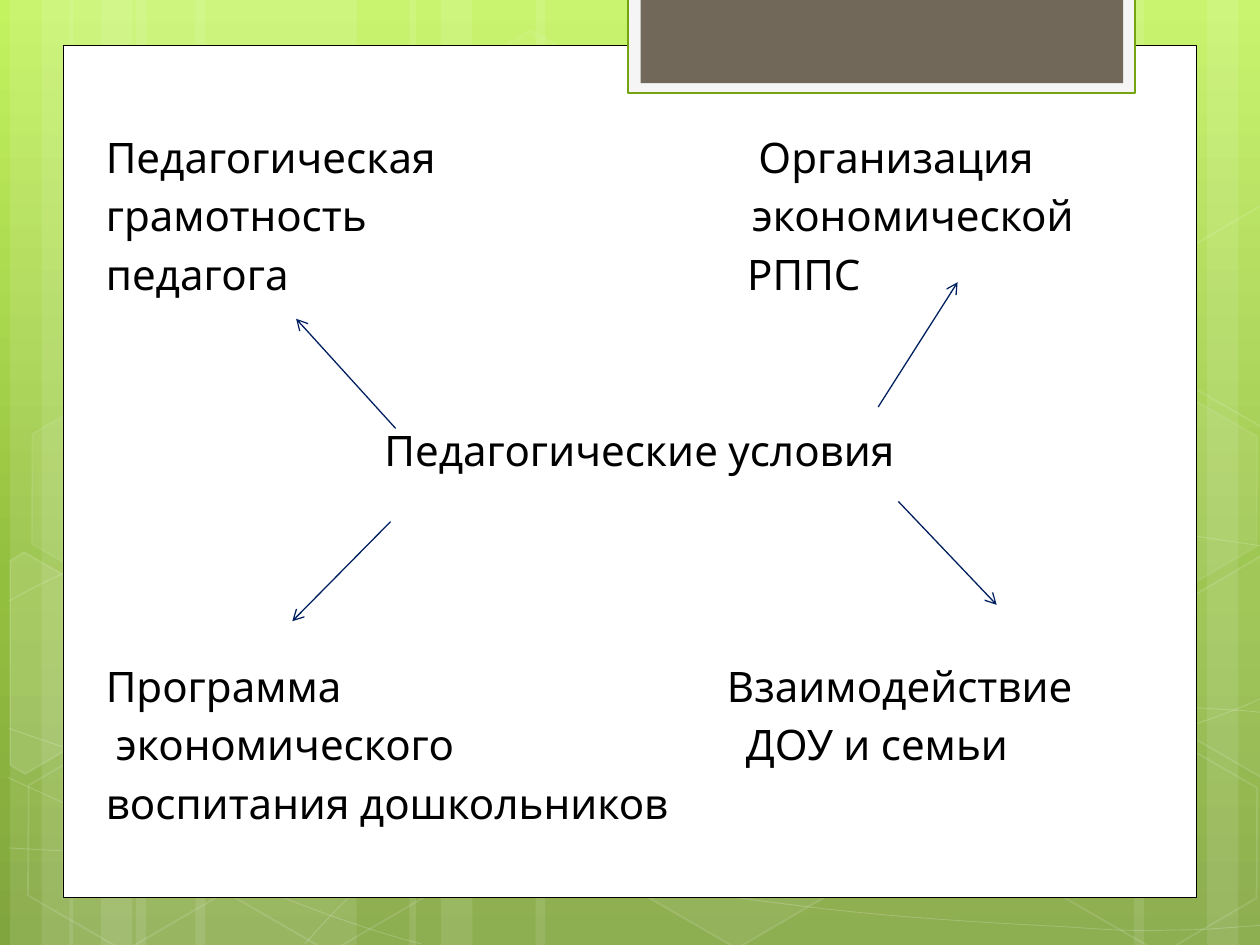
from copy import deepcopy
from math import cos, radians, sin
from typing import NamedTuple

from lxml import etree
from pptx import Presentation
from pptx.dml.color import RGBColor
from pptx.enum.shapes import MSO_CONNECTOR, MSO_SHAPE
from pptx.enum.text import MSO_ANCHOR, PP_ALIGN
from pptx.oxml.ns import qn
from pptx.util import Inches, Pt

RECTANGLE, HEXAGON = MSO_SHAPE.RECTANGLE, MSO_SHAPE.HEXAGON
STRAIGHT = MSO_CONNECTOR.STRAIGHT
LEFT, CENTER, TOP = PP_ALIGN.LEFT, PP_ALIGN.CENTER, MSO_ANCHOR.TOP
UNIT = Inches(0.1)
COLUMNS, ROWS, TILT = 100, 75, 30
FONT, FONT_SIZE, LINE_PITCH, LINE_GAP = "League Spartan", 24, 33.6, 4.8
WHITE, BLACK, NAVY = "FFFFFF", "000000", "002060"

SKY = [(0, "C3F35F"), (0.62, "93BF3F"), (1, "81A53E")]
STRIPES = [(10.8, 17.5), (0.8, 5), (3.3, 8.3), (15.5, 17.5), (5.5, 5), (8, 8.3),
           (73.3, 17.5), (95.8, 5), (90, 8.3), (42.5, 30.8), (32.5, 5), (35, 8.3)]
CURVES = [
    [(0.7, 67.3), (6.1, 67.6), (11.5, 67.9), (19, 67.8), (26.5, 67.7), (35.8, 67.5), (45.8, 66.5),
     (55.8, 65.5), (70, 63.6), (79.2, 61.7), (88.3, 59.8), (97.7, 56.8), (100.7, 55.1)],
    [(0.7, 47.7), (3.6, 46.1), (6.5, 44.6), (12.1, 43.1), (17.8, 41.6), (25.9, 39.4), (34.7, 38.7),
     (43.6, 38), (54.4, 37.9), (65.4, 38.7), (76.4, 39.5), (94.7, 42.6), (100.7, 43.4)],
    [(0.6, 61.7), (12.7, 67.2), (24.7, 72.7), (33.4, 74.9)],
    [(0.7, 57.8), (3.8, 58.9), (7, 60), (12.8, 61.6), (18.6, 63.1), (27.3, 65.6), (35.7, 67.3),
     (44, 69), (54.5, 70.8), (62.8, 71.8), (71.1, 72.9), (80, 73.3), (85.3, 73.6),
     (90.5, 74), (91.9, 73.8), (94.5, 73.8), (97.1, 73.7), (98.9, 73.5), (100.7, 73.4)],
    [(24.2, 74.9), (26, 72.9), (27.8, 70.9), (30.2, 69.1), (32.6, 67.3), (36, 65.3), (38.8, 63.9),
     (41.6, 62.5), (43.3, 61.9), (47, 60.9), (50.6, 59.9), (57.3, 58.5), (60.8, 57.8),
     (64.4, 57.1), (64.9, 57.1), (68, 56.9), (71.1, 56.6), (76, 56.3), (79.4, 56.2),
     (82.9, 56.1), (88.6, 56.2), (88.6, 56.2), (90.8, 56.2), (93.1, 56.2), (95.3, 56.2),
     (97.1, 56.3), (98.8, 56.4), (99.7, 56.5), (100.6, 56.6), (100.3, 56.5), (100.6, 56.6)],
]
HEXAGONS = [(33.4, 3.6, 4, 8), (49.7, 58.9, 6, 12), (1.1, 59.1, None, 12), (1.4, 31.2, 7, 8),
            (17.4, 59.2, None, 12), (75.3, 45.3, 10, 12), (83.4, 59.3, None, 12),
            (83.4, 31.4, 7, 8)]
LEFT_EDGE = [(-2.8, -9), (-1.7, -9.7), (6, -5.3), (5.9, 3.5), (-1.6, 7.9), (-2.8, 7.2)]
RIGHT_EDGE = [(-5.9, -3.5), (1.6, -7.9), (2.4, -7.4), (2.4, 9.3), (1.7, 9.7), (-5.9, 5.3)]
CUT_HEXAGONS = [(3.6, 53.5, LEFT_EDGE, 10), (98.5, 52, RIGHT_EDGE, 4),
                (98.5, 24.2, RIGHT_EDGE, None)]

CONDITIONS = [
    (0, "Педагогическая", 5.18, "Организация"),
    (0, "грамотность", 5.13, "экономической"),
    (0, "педагога", 5.09, "РППС"),
    (2, "Педагогические условия", None, None),
    (3, "Программа", 4.93, "Взаимодействие"),
    (0, " экономического", 5.08, "ДОУ и семьи"),
    (0, "воспитания дошкольников", None, None),
]
ARROWS = [((26.4, 30.4), (18.5, 21.7)), ((26, 37.8), (18.2, 45.7)),
          ((64.7, 28.7), (71, 18.8)), ((66.3, 36.2), (74.1, 44.4))]


class Box(NamedTuple):
    """Area measured in columns and rows of the page grid."""
    left: float
    top: float
    width: float
    height: float

    def inside(self, left, top, width, height):
        """Return an area offset from this one."""
        return Box(self.left + left, self.top + top, width, height)

    def lengths(self):
        """Return the four lengths for a shape."""
        return [int(value * UNIT) for value in self]

    def point(self, spot):
        """Return a spot of this area as slide lengths."""
        return int((self.left + spot[0]) * UNIT), int((self.top + spot[1]) * UNIT)


def color(hex_code):
    """Turn a hex string into a colour."""
    return RGBColor.from_string(hex_code)


def fade(fill, percent):
    """Give a solid fill an opacity in percent."""
    if percent < 100:
        value = fill._xPr.find(qn("a:solidFill"))[0]
        etree.SubElement(value, qn("a:alpha"), val=str(percent * 1000))


def paint(shape, fill=None, opacity=100, line=None, width=1, line_opacity=100):
    """Set the fill and outline of a shape."""
    shape.shadow.inherit = False
    if fill and opacity:
        shape.fill.solid()
        shape.fill.fore_color.rgb = color(fill)
        fade(shape.fill, opacity)
    else:
        shape.fill.background()
    if line:
        shape.line.color.rgb = color(line)
        shape.line.width = Pt(width)
        fade(shape.line.fill, line_opacity)
    else:
        shape.line.fill.background()


def add_outline(page, box, spots, close):
    """Draw a polygon or open line through spots of a box."""
    points = [box.point(spot) for spot in spots]
    builder = page.shapes.build_freeform(*points[0])
    builder.add_line_segments(points[1:], close=close)
    return builder.convert_to_shape()


def add_curve(page, box, controls):
    """Draw a chain of cubic curves from its control points."""
    curve = add_outline(page, box, controls, False)
    segments = list(curve._element.iter(qn("a:lnTo")))
    for start in range(0, len(segments), 3):
        cubic = etree.Element(qn("a:cubicBezTo"))
        segments[start].addprevious(cubic)
        for segment in segments[start:start + 3]:
            cubic.append(segment[0])
            segment.getparent().remove(segment)
    return curve


def turn_back(spot):
    """Undo the hexagon tilt for a spot around its centre."""
    x, y = spot
    angle = radians(TILT)
    return x * cos(angle) + y * sin(angle), y * cos(angle) - x * sin(angle)


def add_sky(page):
    """Fill the background with a vertical gradient."""
    fill = page.background.fill
    fill.gradient()
    fill.gradient_angle = 270
    stops = page.element.find(".//" + qn("a:gsLst"))
    stops.append(deepcopy(stops[-1]))
    for stop, (position, shade) in zip(fill.gradient_stops, SKY):
        stop.position = position
        stop.color.rgb = color(shade)


def add_backdrop(page, box):
    """Draw the stripes, curves and hexagons."""
    for left, width in STRIPES:
        stripe = page.shapes.add_shape(RECTANGLE, *box.inside(left, 0, width, box.height).lengths())
        paint(stripe, WHITE, 10)
    for controls in CURVES:
        paint(add_curve(page, box, controls), line=WHITE, width=0.5, line_opacity=20)
    for left, top, opacity, line_opacity in HEXAGONS:
        hexagon = page.shapes.add_shape(HEXAGON, *box.inside(left, top, 17.5, 15.2).lengths())
        hexagon.adjustments[0] = 0.285
        hexagon.rotation = TILT
        paint(hexagon, WHITE, opacity, WHITE, 1, line_opacity)
    for left, top, spots, opacity in CUT_HEXAGONS:
        middle = box.inside(left, top, 0, 0)
        hexagon = add_outline(page, middle, [turn_back(spot) for spot in spots], True)
        hexagon.rotation = TILT
        paint(hexagon, WHITE, opacity, WHITE, 1, 12)


def add_card(page, box):
    """Draw the white card with its tab at the top."""
    for area, fill, line, width in (
            (box, WHITE, BLACK, 0.5),
            (box.inside(44.85, -3.8, 40.2, 7.6), "F5F5F5", "74A510", 1.25),
            (box.inside(45.85, -3.8, 38.3, 6.8), "71685A", None, 0)):
        paint(page.shapes.add_shape(RECTANGLE, *area.lengths()), fill, line=line, width=width)


def add_span(para, text):
    """Add one run in the body style."""
    span = para.add_run()
    span.text = text
    span.font.name, span.font.size = FONT, Pt(FONT_SIZE)
    span.font.color.rgb = color(BLACK)


def add_conditions(page, box):
    """Write the conditions in two columns around the heading."""
    frame = page.shapes.add_textbox(*box.lengths()).text_frame
    frame.word_wrap, frame.vertical_anchor = True, TOP
    frame.margin_left, frame.margin_right = Inches(0.17), Inches(0.1)
    frame.margin_top = Inches(0.52)
    for index, (skipped, text, stop, partner) in enumerate(CONDITIONS):
        para = frame.add_paragraph() if index else frame.paragraphs[0]
        para.alignment = CENTER if text == "Педагогические условия" else LEFT
        para.space_before = Pt(LINE_GAP + skipped * LINE_PITCH) if index else Pt(0)
        add_span(para, text)
        if partner:
            tabs = etree.SubElement(para._p.get_or_add_pPr(), qn("a:tabLst"))
            etree.SubElement(tabs, qn("a:tab"), pos=str(Inches(stop)), algn="l")
            add_span(para, "\t" + partner)


def add_arrows(page, box):
    """Draw the arrows from the heading to the conditions."""
    for start, end in ARROWS:
        arrow = page.shapes.add_connector(STRAIGHT, *box.point(start), *box.point(end))
        arrow.line.color.rgb = color(NAVY)
        arrow.line.width = Pt(0.75)
        etree.SubElement(arrow.line._get_or_add_ln(), qn("a:tailEnd"), type="arrow")
        etree.SubElement(arrow._element.spPr, qn("a:effectLst"))


def main():
    """Build and save the deck."""
    deck = Presentation()
    deck.slide_width, deck.slide_height = COLUMNS * UNIT, ROWS * UNIT
    page = deck.slides.add_slide(deck.slide_layouts[6])
    whole = Box(0, 0, COLUMNS, ROWS)
    card = whole.inside(5, 3.6, 90, 67.65)
    add_sky(page)
    add_backdrop(page, whole)
    add_card(page, card)
    add_conditions(page, card.inside(1.7, 1.6, 87.4, 63))
    add_arrows(page, card)
    deck.save("out.pptx")


if __name__ == "__main__":
    main()
